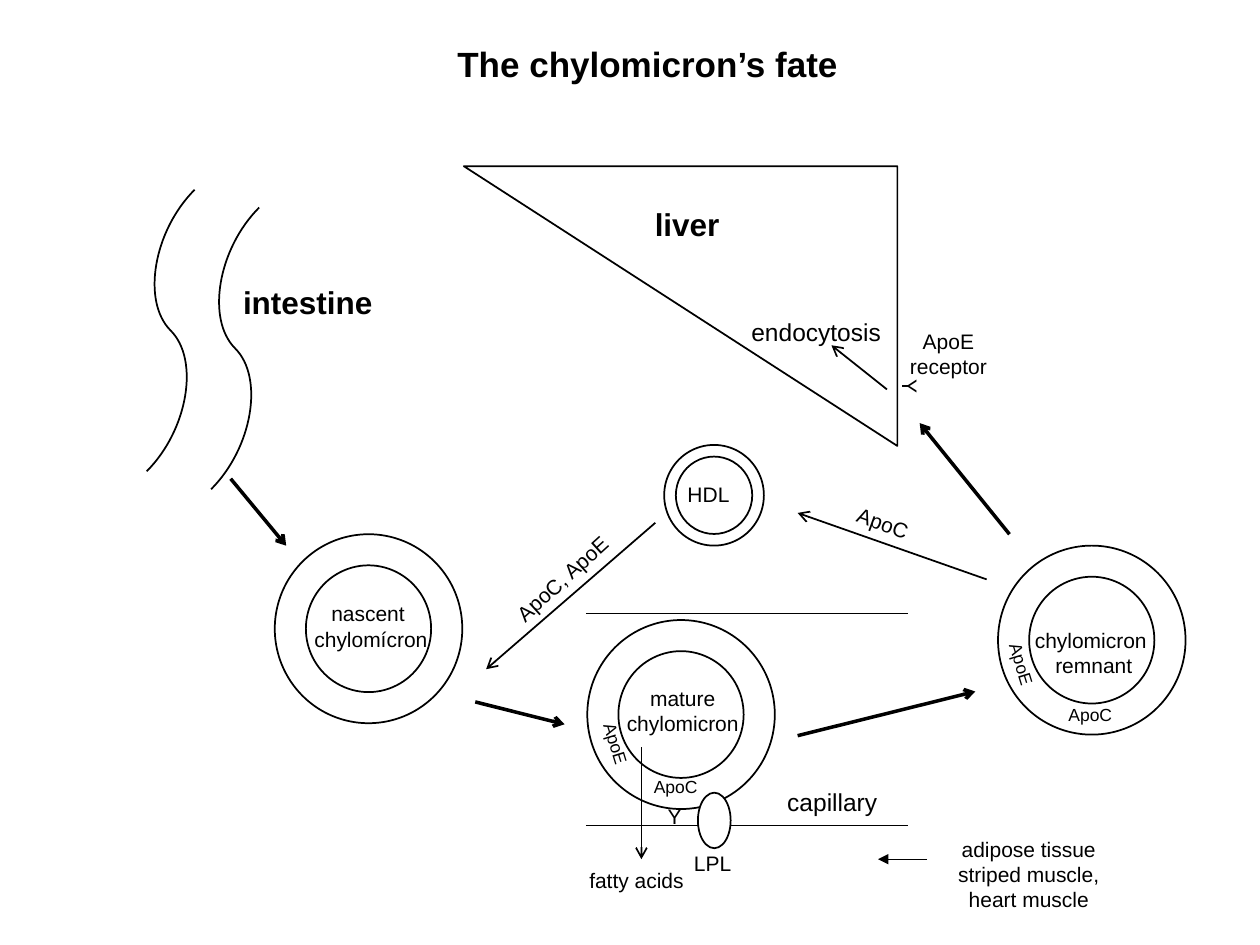
from pptx import Presentation
from pptx.dml.color import RGBColor
from pptx.enum.shapes import MSO_CONNECTOR, MSO_SHAPE
from pptx.enum.text import MSO_AUTO_SIZE, PP_ALIGN
from pptx.oxml.ns import qn
from pptx.util import Cm, Pt
from lxml.etree import SubElement

BLACK, WHITE = "000000", "FFFFFF"
PARTICLE_SIZE = (3.78, 3.81)
APOE_TILT = 72.9


def color(hex_code):
    """Turn a hex string into a colour."""
    return RGBColor.from_string(hex_code)


def add_label(slide, text, left, top, width, height, size=12, bold=False,
              centered=False, rotation=0, wrap=False):
    """Write one label, with a paragraph for each line of its text."""
    label = slide.shapes.add_textbox(Cm(left), Cm(top), Cm(width), Cm(height))
    label.rotation = rotation
    frame = label.text_frame
    frame.word_wrap = wrap
    frame.auto_size = MSO_AUTO_SIZE.SHAPE_TO_FIT_TEXT
    frame.text = text
    for paragraph in frame.paragraphs:
        paragraph.alignment = PP_ALIGN.CENTER if centered else PP_ALIGN.LEFT
        for run in paragraph.runs:
            run.font.name = "Arial"
            run.font.size = Pt(size)
            run.font.bold = bold
            run.font.color.rgb = color(BLACK)


def add_outline(slide, kind, left, top, width, height, fill=None, ring=None, rotation=0):
    """Draw a preset shape with a thin black outline."""
    outline = slide.shapes.add_shape(kind, Cm(left), Cm(top), Cm(width), Cm(height))
    outline.shadow.inherit = False
    outline.rotation = rotation
    if ring is not None:
        outline.adjustments[0] = ring
    if fill:
        outline.fill.solid()
        outline.fill.fore_color.rgb = color(fill)
    else:
        outline.fill.background()
    outline.line.color.rgb = color(BLACK)
    outline.line.width = Pt(1)


def add_line(slide, start, end, width=1, head=None, kind=MSO_CONNECTOR.STRAIGHT, rotation=0):
    """Draw a black connector, with an arrowhead at its end if one is named."""
    line = slide.shapes.add_connector(kind, *(Cm(value) for value in start + end))
    line.line.color.rgb = color(BLACK)
    line.line.width = Pt(width)
    properties = line._element.spPr
    if rotation:
        properties.find(qn("a:xfrm")).rot = rotation
    if head:
        SubElement(properties.find(qn("a:ln")), qn("a:tailEnd"), type=head)
    SubElement(properties, qn("a:effectLst"))


def draw_organs(slide):
    """Draw the intestine, the liver and the capillary walls."""
    for shift_x, shift_y in ((1.3, 0.36), (0, 0)):
        add_line(slide, (1.09 + shift_x, 8.33 + shift_y), (5.79 + shift_x, 5 + shift_y),
                 kind=MSO_CONNECTOR.CURVE, rotation=315)
    add_outline(slide, MSO_SHAPE.RIGHT_TRIANGLE, 9.35, 3.35, 8.74, 5.64, rotation=180)
    for wall in (12.37, 16.64):
        add_line(slide, (11.81, wall), (18.31, wall))


def draw_particles(slide):
    """Draw the lipoproteins and the lipase."""
    add_outline(slide, MSO_SHAPE.DONUT, 13.39, 8.97, 2.01, 2.03, ring=0.117)
    for left, top in ((5.54, 10.77), (11.84, 12.5), (20.12, 11)):
        add_outline(slide, MSO_SHAPE.DONUT, left, top, *PARTICLE_SIZE, ring=0.166)
    add_outline(slide, MSO_SHAPE.OVAL, 14.07, 15.98, 0.66, 1.12, fill=WHITE)


def draw_arrows(slide):
    """Draw the path of the chylomicron and the exchanges along it."""
    path = (
        ((4.65, 9.65), (5.77, 11)),
        ((9.58, 14.15), (11.38, 14.6)),
        ((16.08, 14.83), (19.66, 13.94)),
        ((20.35, 10.77), (18.54, 8.53)),
    )
    exchanges = (
        ((12.93, 15.06), (12.93, 17.32)),
        ((19.89, 11.68), (16.08, 10.34)),
        ((13.21, 10.54), (9.8, 13.49)),
        ((17.88, 7.85), (16.76, 6.96)),
    )
    for width, arrows in ((2, path), (1, exchanges)):
        for start, end in arrows:
            add_line(slide, start, end, width=width, head="arrow")
    add_line(slide, (18.69, 17.32), (17.7, 17.32), width=0.75, head="triangle")


def write_labels(slide):
    """Write the title and the names of organs, particles and proteins."""
    add_label(slide, "The chylomicron’s fate", 8.97, 0.74, 9.25, 1.24, size=20, bold=True)
    add_label(slide, "liver", 12.95, 4.01, 1.83, 1.02, size=18, bold=True)
    add_label(slide, "intestine", 4.65, 5.59, 3.15, 1.02, size=18, bold=True)
    add_label(slide, "capillary", 15.62, 15.75, 2.34, 0.86, size=14)
    add_label(slide, "endocytosis", 14.88, 6.27, 3.15, 0.86, size=14, centered=True)

    for text, *box in (
        ("nascent \nchylomícron", 6.07, 11.99, 2.82, 1.27),
        ("mature\nchylomicron", 12.37, 13.69, 2.79, 1.27),
        ("chylomicron \nremnant", 20.6, 12.52, 2.9, 1.27),
        ("ApoE\nreceptor", 18.08, 6.5, 2.08, 1.27),
        ("adipose tissue\nstriped muscle,\nheart muscle", 19.05, 16.74, 3.38, 1.8),
    ):
        add_label(slide, text, *box, centered=True)

    add_label(slide, "HDL", 13.61, 9.58, 1.52, 0.86)
    add_label(slide, "LPL", 13.74, 17.02, 1.42, 0.86)
    add_label(slide, "fatty acids", 11.63, 17.37, 2.44, 0.76)
    add_label(slide, "Y", 13.21, 16.08, 0.89, 0.86)
    add_label(slide, "Y", 17.86, 7.42, 0.89, 0.86, rotation=90)
    add_label(slide, "ApoC", 17.02, 10.16, 1.57, 0.76, rotation=20)
    add_label(slide, "ApoC, ApoE", 9.86, 11.1, 3.35, 0.76, rotation=317.8, wrap=True)

    for left, top in ((11.63, 14.71), (19.81, 13.11)):
        add_label(slide, "ApoE", left, top, 1.55, 0.76, size=10, rotation=APOE_TILT)
    for left, top in ((12.93, 15.52), (21.29, 14.07)):
        add_label(slide, "ApoC", left, top, 1.57, 0.76, size=10)


def main():
    """Build the slide and save it."""
    presentation = Presentation()
    presentation.slide_width, presentation.slide_height = Cm(25.4), Cm(19.05)
    slide = presentation.slides.add_slide(presentation.slide_layouts[6])
    draw_organs(slide)
    draw_particles(slide)
    draw_arrows(slide)
    write_labels(slide)
    presentation.save("out.pptx")


if __name__ == "__main__":
    main()
